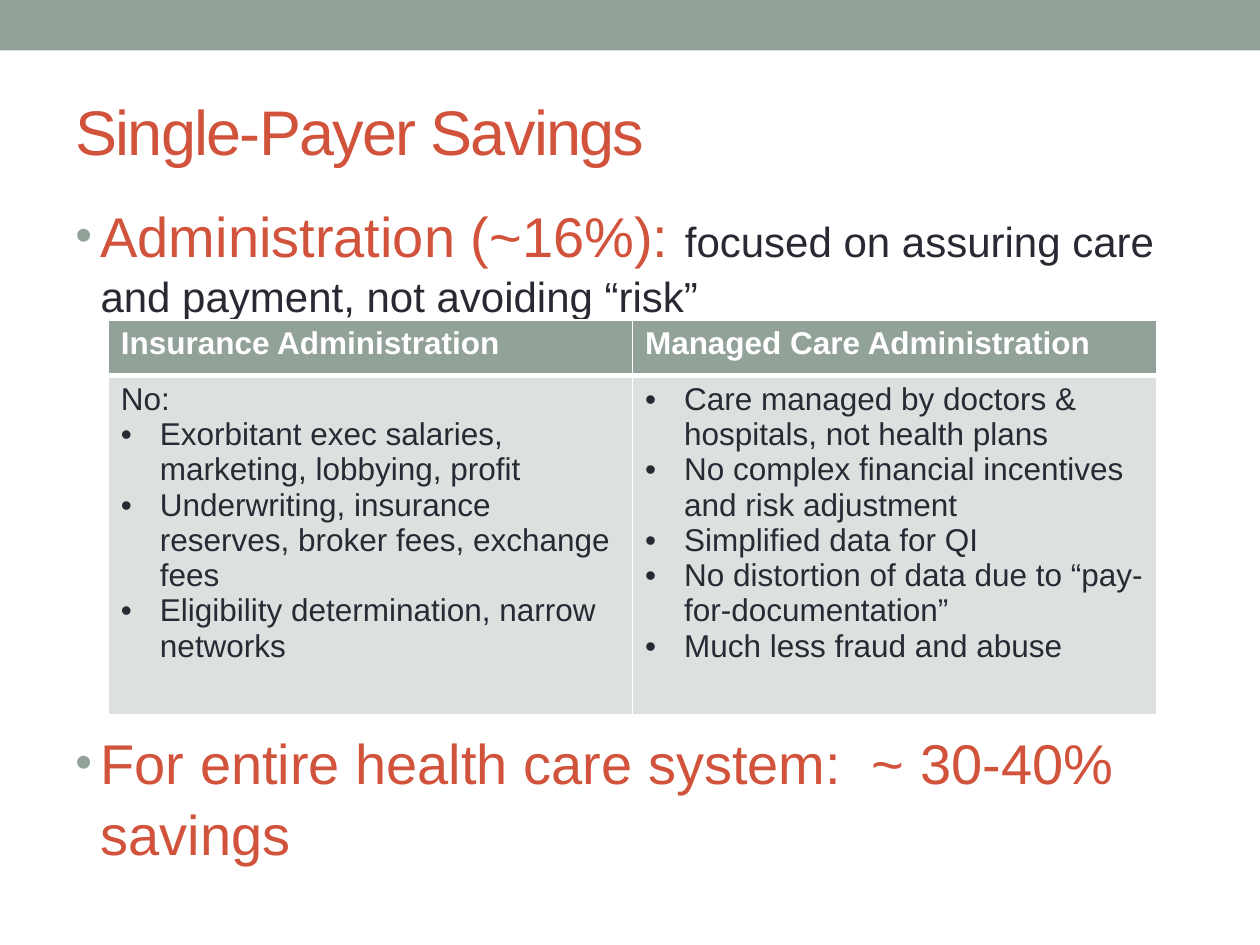
import pptx
import pptx.dml.color
import pptx.enum.shapes
import pptx.enum.text
import pptx.oxml
import pptx.oxml.ns
import pptx.util
from pptx.util import Inches

SAGE = pptx.dml.color.RGBColor(0x93, 0xA2, 0x99)
RUST = pptx.dml.color.RGBColor(0xD2, 0x53, 0x3C)
INK = pptx.dml.color.RGBColor(0x29, 0x29, 0x34)
PALE = pptx.dml.color.RGBColor(0xDC, 0xE0, 0xDE)
WHITE = pptx.dml.color.RGBColor(0xFF, 0xFF, 0xFF)
FONT = "Arial"

# Content
TITLE = "Single-Payer Savings"
# Each point: space before in points, then runs of (text, size, colour)
POINTS = [
    (0, [("Administration (~16%): ", 32, RUST),
         ("focused on assuring care and payment, not avoiding “risk”", 24, INK)]),
    (231, [("For entire health care system:  ~ 30-40% savings", 32, RUST)]),
]
# Each column: heading, lead-in line, bullets
COLUMNS = [
    ("Insurance Administration", "No:", [
        "Exorbitant exec salaries, marketing, lobbying, profit",
        "Underwriting, insurance reserves, broker fees, exchange fees",
        "Eligibility determination, narrow networks",
    ]),
    ("Managed Care Administration", None, [
        "Care managed by doctors & hospitals, not health plans",
        "No complex financial incentives and risk adjustment",
        "Simplified data for QI",
        "No distortion of data due to “pay-for-documentation”",
        "Much less fraud and abuse",
    ]),
]
COLUMN_WIDTH = 4.16
ROW_HEIGHTS = [0.44, 2.69]


def a_element(tag, content="", **attributes):
    pairs = "".join(f' {key}="{value}"' for key, value in attributes.items())
    namespace = pptx.oxml.ns.nsdecls("a")
    return pptx.oxml.parse_xml(f"<a:{tag} {namespace}{pairs}>{content}</a:{tag}>")


def add_run(paragraph, text, size, color, bold=False):
    run = paragraph.add_run()
    run.text = text
    run.font.name, run.font.size = FONT, pptx.util.Pt(size)
    run.font.color.rgb, run.font.bold = color, bold
    return run


def add_bullet(paragraph, indent, color=None, percent=100):
    properties = paragraph._p.get_or_add_pPr()
    properties.set("marL", str(Inches(indent)))
    properties.set("indent", str(-Inches(indent)))
    if color is not None:
        properties.append(a_element("buClr", f'<a:srgbClr val="{color}"/>'))
    properties.append(a_element("buSzPct", val=percent * 1000))
    properties.append(a_element("buFont", typeface=FONT))
    properties.append(a_element("buChar", char="•"))


def add_text_frame(slide, left, top, width, height):
    frame = slide.shapes.add_textbox(
        Inches(left), Inches(top), Inches(width), Inches(height)).text_frame
    frame.word_wrap = True
    return frame


def style_cell(cell, fill, bottom_width):
    cell.fill.solid()
    cell.fill.fore_color.rgb = fill
    line_fill = f'<a:solidFill><a:srgbClr val="{WHITE}"/></a:solidFill>'
    widths = {"lnL": 1, "lnR": 1, "lnT": 1, "lnB": bottom_width}
    for position, (side, width) in enumerate(widths.items()):
        border = a_element(side, line_fill, w=int(pptx.util.Pt(width)))
        cell._tc.get_or_add_tcPr().insert(position, border)


def main():
    deck = pptx.Presentation()
    deck.slide_width, deck.slide_height = Inches(10), Inches(7.5)
    slide = deck.slides.add_slide(deck.slide_layouts[6])

    # Top band
    band = slide.shapes.add_shape(pptx.enum.shapes.MSO_SHAPE.RECTANGLE,
                                  0, 0, deck.slide_width, Inches(0.4))
    band.shadow.inherit = False
    band.fill.solid()
    band.fill.fore_color.rgb = SAGE
    band.line.fill.background()

    # Title
    title = add_text_frame(slide, 0.5, 0.54, 9, 0.98)
    title.vertical_anchor = pptx.enum.text.MSO_ANCHOR.MIDDLE
    heading = add_run(title.paragraphs[0], TITLE, 36, RUST)
    heading._r.get_or_add_rPr().set("spc", "-100")

    # Main points, with room for the table between them
    body = add_text_frame(slide, 0.5, 1.52, 9, 5.56)
    for number, (space_before, runs) in enumerate(POINTS):
        point = body.add_paragraph() if number else body.paragraphs[0]
        point.line_spacing = 1.05
        point.space_before = pptx.util.Pt(space_before)
        add_bullet(point, 0.2, SAGE, 85)
        for text, size, color in runs:
            add_run(point, text, size, color)

    # Comparison table
    table = slide.shapes.add_table(
        len(ROW_HEIGHTS), len(COLUMNS), Inches(0.86), Inches(2.54),
        Inches(COLUMN_WIDTH * len(COLUMNS)), Inches(sum(ROW_HEIGHTS))).table
    for row, height in zip(table.rows, ROW_HEIGHTS):
        row.height = Inches(height)
    for index, (column_heading, lead_in, bullets) in enumerate(COLUMNS):
        table.columns[index].width = Inches(COLUMN_WIDTH)
        header, details = table.cell(0, index), table.cell(1, index)
        style_cell(header, SAGE, 3)
        style_cell(details, PALE, 1)
        add_run(header.text_frame.paragraphs[0], column_heading, 18, WHITE, True)
        lines = ([lead_in] if lead_in else []) + bullets
        for number, text in enumerate(lines):
            frame = details.text_frame
            paragraph = frame.add_paragraph() if number else frame.paragraphs[0]
            if text != lead_in:
                add_bullet(paragraph, 0.31)
            add_run(paragraph, text, 18, INK)

    deck.save("out.pptx")


if __name__ == "__main__":
    main()
